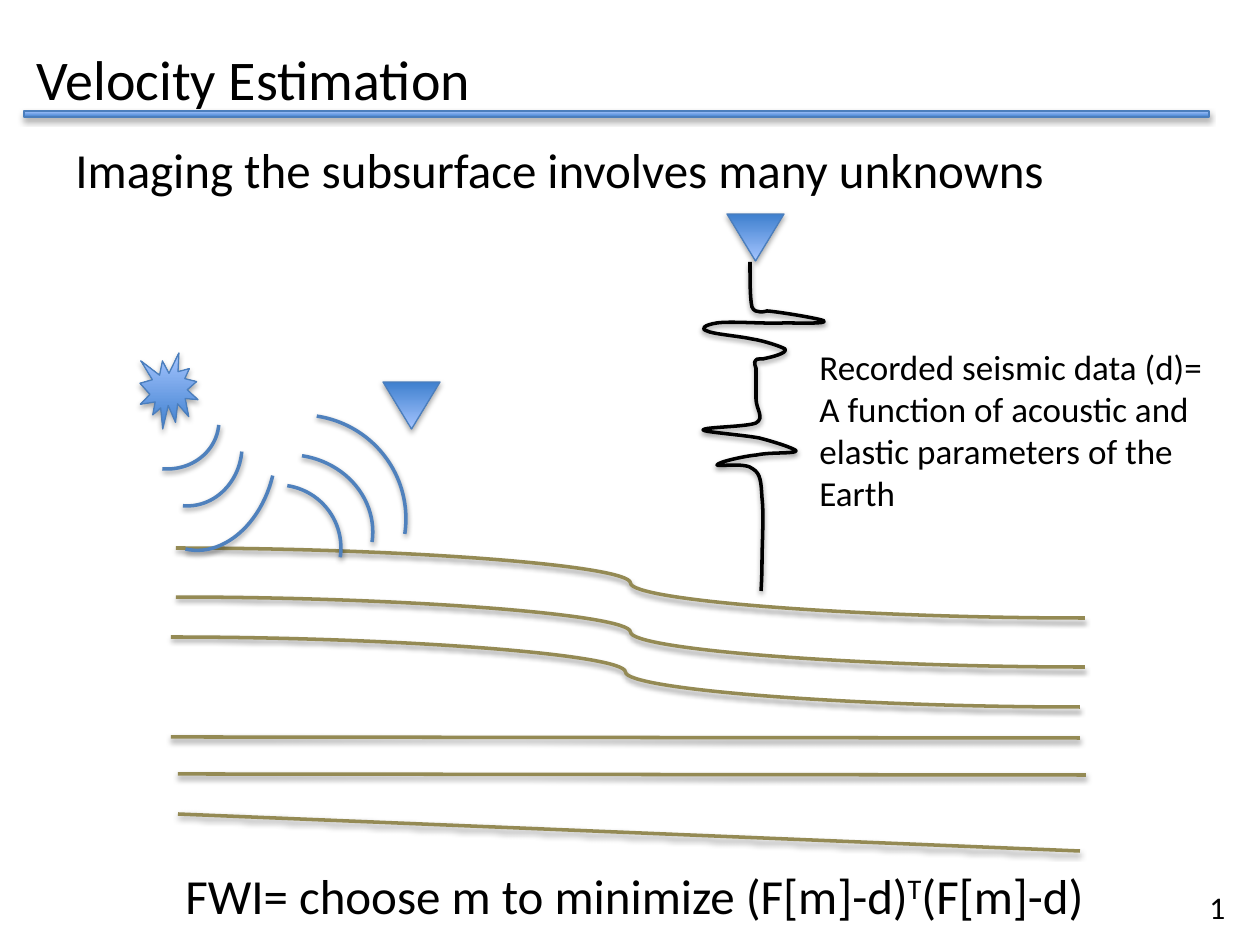
from dataclasses import dataclass

from lxml import etree
from pptx import Presentation
from pptx.dml.color import RGBColor
from pptx.enum.shapes import MSO_CONNECTOR, MSO_SHAPE
from pptx.enum.text import MSO_ANCHOR, PP_ALIGN
from pptx.oxml.ns import qn
from pptx.util import Emu, Pt

PX = 914400 / 126
CURVE, STRAIGHT = MSO_CONNECTOR.CURVE, MSO_CONNECTOR.STRAIGHT
RECT, ARC = MSO_SHAPE.RECTANGLE, MSO_SHAPE.ARC
BURST, TRIANGLE = MSO_SHAPE.EXPLOSION1, MSO_SHAPE.ISOSCELES_TRIANGLE
TOP, LEFT = MSO_ANCHOR.TOP, PP_ALIGN.LEFT


@dataclass(frozen=True)
class Theme:
    font: str = "Calibri"
    text: str = "000000"
    wave: str = "4F81BD"
    layer: str = "948A54"
    edge: str = "4B7EBC"
    dark: str = "3F80CE"
    light: str = "A4C4FF"
    title: int = 32
    body: int = 28
    note: int = 20
    number: int = 18


theme = Theme()


def px(*values):
    return [Emu(round(v * PX)) for v in values]


def outline(sp, color, width=2, distance=20000, alpha=38000):
    sp.line.color.rgb = RGBColor.from_string(color)
    sp.line.width = Pt(width)
    effects = etree.SubElement(sp._element.spPr, qn("a:effectLst"))
    shadow = etree.SubElement(
        effects, qn("a:outerShdw"), blurRad="40000", dist=str(distance),
        dir="5400000", rotWithShape="0")
    black = etree.SubElement(shadow, qn("a:srgbClr"), val="000000")
    etree.SubElement(black, qn("a:alpha"), val=str(alpha))


prs = Presentation()
prs.slide_width, prs.slide_height = px(1260, 945)
s = prs.slides.add_slide(prs.slide_layouts[5])

title = s.shapes.title
title.left, title.top, title.width, title.height = px(24, 38, 1134, 92)
intro = s.shapes.add_textbox(*px(63, 133, 1134, 72))
note = s.shapes.add_textbox(*px(807, 339, 433, 182))
formula = s.shapes.add_textbox(*px(173, 859, 1147, 72))
number = s.shapes.add_textbox(*px(1197, 882, 42, 50))

texts = [
    (title, ["Velocity Estimation"], theme.title, True),
    (intro, ["Imaging the subsurface involves many unknowns"], theme.body, True),
    (note, ["Recorded seismic data (d)=",
            "A function of acoustic and elastic parameters of the Earth"],
     theme.note, True),
    (formula, ["FWI= choose m to minimize (F[m]-d)"], theme.body, True),
    (number, ["1"], theme.number, False),
]
for box, lines, size, wrap in texts:
    tf = box.text_frame
    tf.text = "\n".join(lines)
    tf.word_wrap = wrap
    tf.vertical_anchor = TOP
    if box is formula:
        for part in ("T", "(F[m]-d)"):
            tf.paragraphs[0].add_run().text = part
        tf.paragraphs[0].runs[1].font._element.set("baseline", "30000")
    for p in tf.paragraphs:
        p.alignment = LEFT
        for r in p.runs:
            r.font.name = theme.font
            r.font.size = Pt(size)
            r.font.color.rgb = RGBColor.from_string(theme.text)

layers = [
    (CURVE, 176, 548, 1085, 618),
    (CURVE, 176, 597, 1085, 667),
    (CURVE, 171, 637, 1080, 707),
    (STRAIGHT, 171, 737, 1080, 738),
    (STRAIGHT, 178, 774, 1086, 775),
    (STRAIGHT, 178, 814, 1080, 851),
]
for kind, *ends in layers:
    outline(s.shapes.add_connector(kind, *px(*ends)), theme.layer)

waves = [
    (118, 368, 97, 105, 94.9),
    (129, 393, 118, 108, 94.9),
    (115, 392, 183, 136, 103.3),
    (215, 485, 126, 126, 8.5),
    (209, 455, 164, 150, 8.5),
    (197, 415, 209, 207, 8.5),
]
for *place, angle in waves:
    sp = s.shapes.add_shape(ARC, *px(*place))
    sp.rotation = angle
    sp.fill.background()
    outline(sp, theme.wave)

trace_curves = [
    (750, 281, 750, 299, 752, 307), (755, 315, 767, 311, 767, 311),
    (780, 312, 822, 319, 824, 321), (827, 324, 801, 323, 784, 323),
    (766, 324, 730, 321, 717, 323), (704, 325, 700, 329, 707, 331),
    (712, 334, 738, 336, 752, 339), (765, 341, 782, 347, 785, 349),
    (788, 353, 772, 357, 767, 358), (762, 360, 757, 358, 756, 360),
    (753, 362, 756, 368, 756, 368), (756, 378, 756, 389, 756, 399),
    (756, 409, 765, 418, 756, 423), (747, 427, 703, 427, 703, 430),
    (703, 432, 743, 435, 759, 438), (775, 442, 796, 449, 796, 451),
    (795, 454, 770, 452, 757, 455), (745, 456, 718, 462, 717, 465),
    (717, 467, 746, 462, 753, 469), (761, 474, 761, 483, 762, 498),
    (764, 514, 762, 546, 762, 561), (762, 577, 761, 591, 761, 591),
]
builder = s.shapes.build_freeform(750, 262, scale=PX)
builder.add_line_segments([curve[4:] for curve in trace_curves], close=False)
trace = builder.convert_to_shape()
left = min(curve[4] for curve in trace_curves)
top = 262
segments = list(trace._element.iter(qn("a:lnTo")))
for segment, curve in zip(segments, trace_curves):
    bezier = etree.Element(qn("a:cubicBezTo"))
    for x, y in zip(curve[::2], curve[1::2]):
        etree.SubElement(bezier, qn("a:pt"), x=str(x - left), y=str(y - top))
    segment.getparent().replace(segment, bezier)
trace.fill.background()
outline(trace, theme.text)

solids = [
    (RECT, 24, 111, 1185, 6, 0),
    (BURST, 140, 353, 58, 76, 0),
    (TRIANGLE, 383, 382, 57, 47, 180),
    (TRIANGLE, 727, 214, 57, 47, 180),
]
for kind, *place, angle in solids:
    sp = s.shapes.add_shape(kind, *px(*place))
    sp.rotation = angle
    sp.fill.gradient()
    sp.fill.gradient_angle = 90
    for stop, color in zip(sp.fill.gradient_stops, (theme.dark, theme.light)):
        stop.color.rgb = RGBColor.from_string(color)
    outline(sp, theme.edge, 0.75, 23000, 35000)

prs.save("out.pptx")
